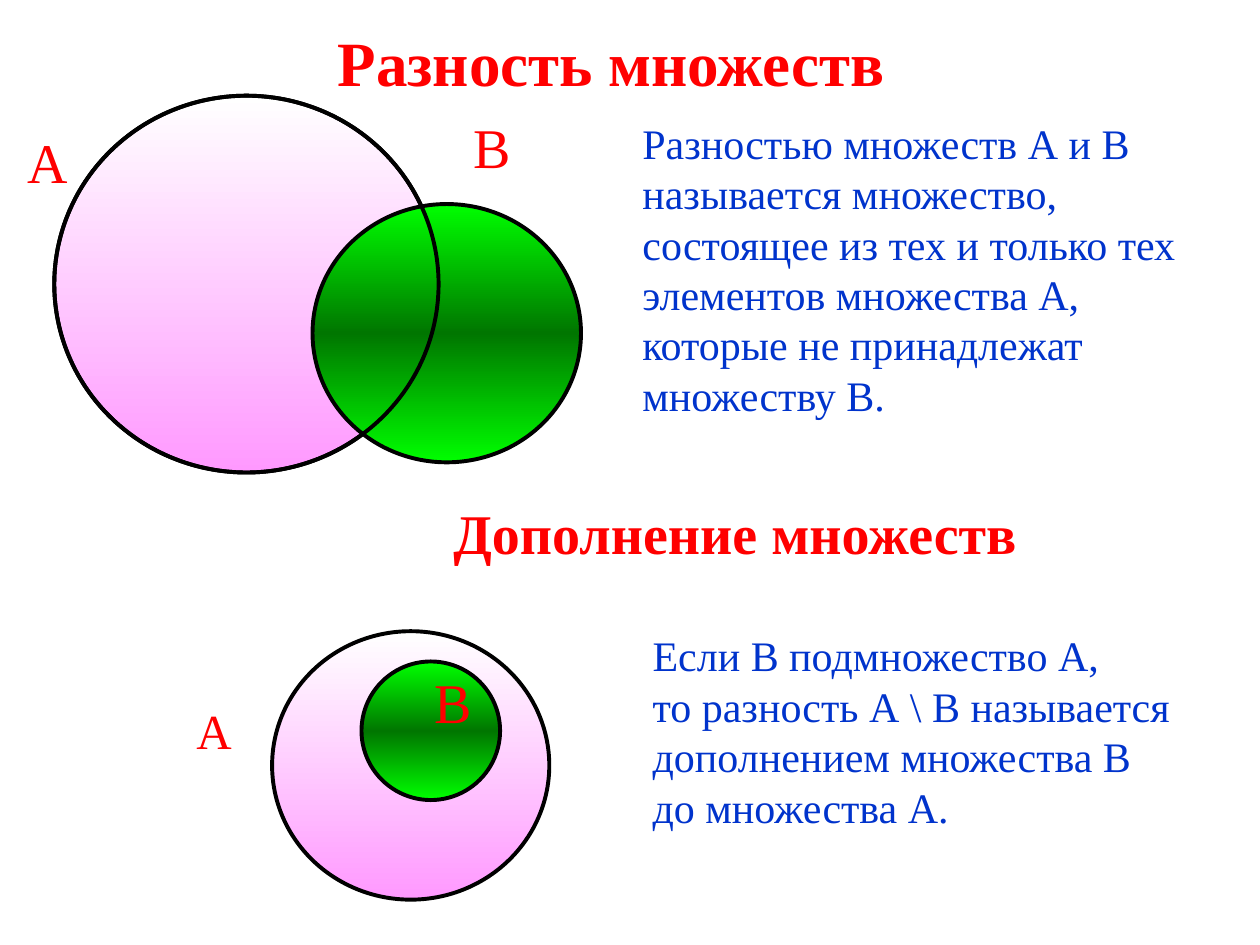
from copy import deepcopy
from pptx import Presentation
from pptx.dml.color import RGBColor
from pptx.enum.shapes import MSO_SHAPE
from pptx.enum.text import MSO_ANCHOR, PP_ALIGN
from pptx.oxml.ns import qn
from pptx.util import Pt

OVAL = MSO_SHAPE.OVAL
TOP, MIDDLE = MSO_ANCHOR.TOP, MSO_ANCHOR.MIDDLE
CENTER = PP_ALIGN.CENTER
FONT = "Times New Roman"
HEX = {"red": "FF0000", "blue": "0033CC", "black": "000000", "white": "FFFFFF",
       "pink": "FF99FF", "lime": "00FF00", "green": "007600"}
PINK = ("white", "pink")
GREEN = ("lime", "green", "lime")


def tint(name):
    return RGBColor.from_string(HEX[name])


class Board:
    def __init__(self, deck):
        self.slide = deck.slides.add_slide(deck.slide_layouts[5])

    def style(self, frame, lines, size, color, bold=False, align=None):
        frame.word_wrap = True
        frame.text = "\n".join(lines)
        for para in frame.paragraphs:
            para.alignment = align
            font = para.font
            font.name, font.size, font.bold = FONT, Pt(size), bold
            font.color.rgb = tint(color)

    def title(self, box, text, size):
        head = self.slide.shapes.title
        head.left, head.top, head.width, head.height = map(Pt, box)
        head.text_frame.vertical_anchor = MIDDLE
        self.style(head.text_frame, [text], size, "red", True, CENTER)

    def text(self, box, lines, size, color="red", bold=False, anchor=TOP):
        frame = self.slide.shapes.add_textbox(*map(Pt, box)).text_frame
        frame.vertical_anchor = anchor
        self.style(frame, lines, size, color, bold)

    def circle(self, box, shades=()):
        oval = self.slide.shapes.add_shape(OVAL, *map(Pt, box))
        oval.shadow.inherit = False
        oval.line.color.rgb = tint("black")
        oval.line.width = Pt(2.25)
        if shades:
            self.blend(oval, shades)
        else:
            oval.fill.background()

    def blend(self, oval, shades):
        fill = oval.fill
        fill.gradient()
        fill.gradient_angle = 270
        stops = next(oval.element.iter(qn("a:gsLst")))
        while len(stops) < len(shades):
            stops.append(deepcopy(stops[0]))
        for i, (stop, name) in enumerate(zip(fill.gradient_stops, shades)):
            stop.position = i / (len(shades) - 1)
            stop.color.rgb = tint(name)


def main():
    deck = Presentation()
    deck.slide_width, deck.slide_height = Pt(720), Pt(540)
    board = Board(deck)
    large = (31, 54.7, 219.6, 215.3)

    board.title((25.2, 3.6, 648, 62.6), "Разность множеств", 36)
    board.circle(large, PINK)
    board.text((8.6, 69.5, 49.7, 46), ["А"], 32)
    board.text((263.5, 60.5, 49.7, 45.4), ["В"], 32)
    board.circle((178.6, 116.6, 153.4, 147.6), GREEN)
    board.circle(large)
    board.text((360, 63.4, 327.6, 180), [
        "Разностью множеств А и В",
        "называется множество,",
        "состоящее из тех и только тех",
        "элементов множества А,",
        "которые не принадлежат",
        "множеству В.",
    ], 24, "blue", anchor=MIDDLE)

    board.circle((155.5, 360.7, 158.4, 153.4), PINK)
    board.text((105.1, 396.5, 49.7, 42), ["А"], 28)
    board.circle((206.6, 378, 79.2, 79.2), GREEN)
    board.text((241.2, 378, 49.7, 45.4), ["В"], 32)
    board.text((365.8, 356.4, 316.1, 122.4), [
        "Если В подмножество А,",
        "то разность А \\ В называется",
        "дополнением множества В",
        "до множества А.",
    ], 24, "blue", anchor=MIDDLE)
    board.text((252, 281.5, 385.9, 45.4), ["Дополнение множеств"], 32, bold=True)

    deck.save("out.pptx")


if __name__ == "__main__":
    main()
